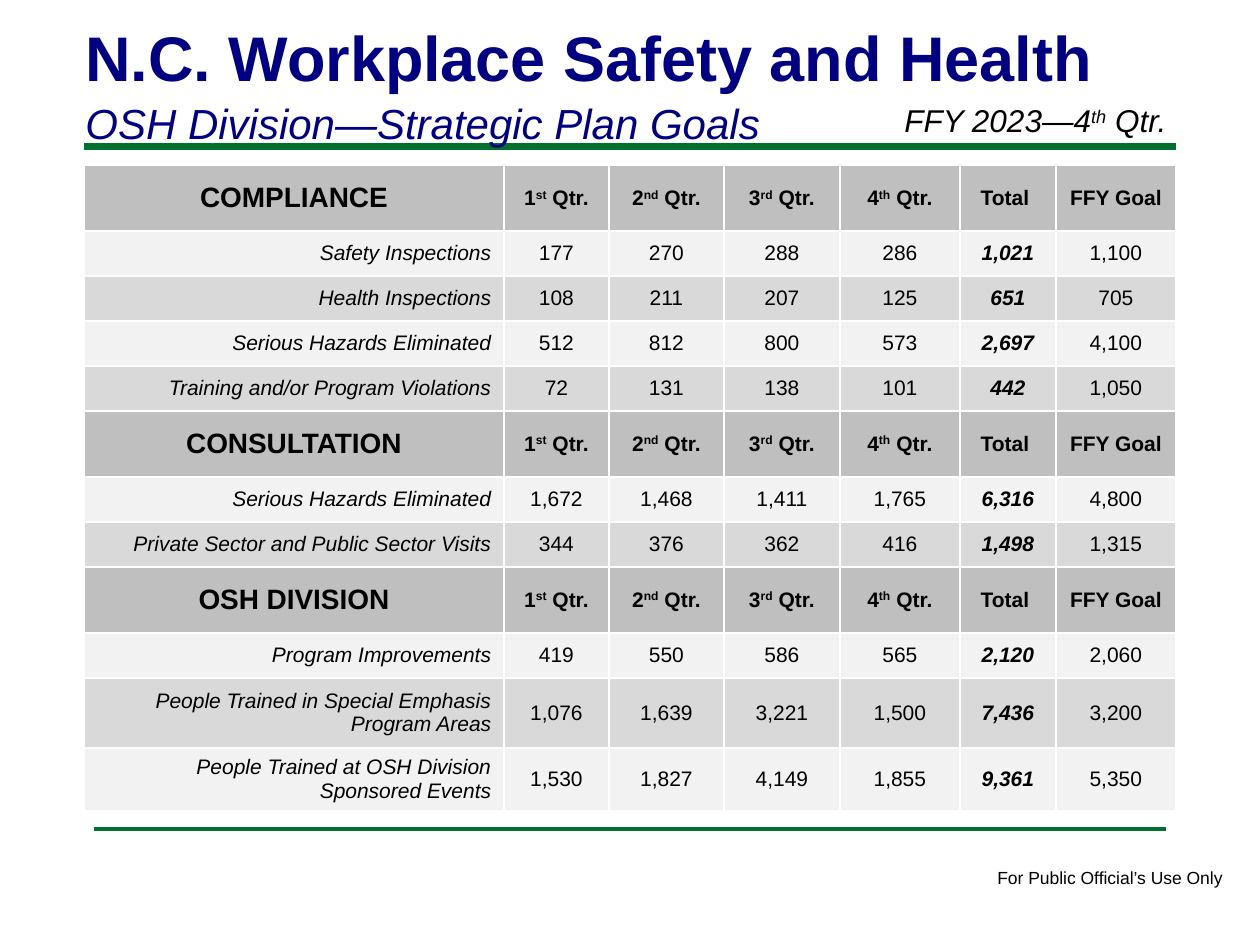
from lxml import etree
from pptx import Presentation
from pptx.dml.color import RGBColor
from pptx.enum.shapes import MSO_CONNECTOR
from pptx.enum.text import MSO_ANCHOR, PP_ALIGN
from pptx.oxml.ns import qn
from pptx.util import Pt

LEFT, CENTER, RIGHT = PP_ALIGN.LEFT, PP_ALIGN.CENTER, PP_ALIGN.RIGHT
MIDDLE = MSO_ANCHOR.MIDDLE
STRAIGHT = MSO_CONNECTOR.STRAIGHT
PX = 914400 / 126
FONT = "Arial"
NAVY, GREEN, BLACK, WHITE = "000080", "007030", "000000", "FFFFFF"
HEADER_FILL, BAND_FILLS = "BFBFBF", ("F2F2F2", "D9D9D9")

# Content: text between carets is superscript
TITLE = "N.C. Workplace Safety and Health"
SUBTITLE = "OSH Division—Strategic Plan Goals"
PERIOD = "FFY 2023—4^th^ Qtr."
FOOTER = "For Public Official’s Use Only"
HEADINGS = ["1^st^ Qtr.", "2^nd^ Qtr.", "3^rd^ Qtr.", "4^th^ Qtr.", "Total ", "FFY Goal"]
TOTAL_COLUMN = HEADINGS.index("Total ") + 1
SECTIONS = {
    "COMPLIANCE": [
        ("Safety Inspections", "177", "270", "288", "286", "1,021", "1,100"),
        ("Health Inspections", "108", "211", "207", "125", "651", "705"),
        ("Serious Hazards Eliminated", "512", "812", "800", "573", "2,697", "4,100"),
        ("Training and/or Program Violations", "72", "131", "138", "101", "442", "1,050"),
    ],
    "CONSULTATION": [
        ("Serious Hazards Eliminated", "1,672", "1,468", "1,411", "1,765", "6,316", "4,800"),
        ("Private Sector and Public Sector Visits", "344", "376", "362", "416", "1,498", "1,315"),
    ],
    "OSH DIVISION": [
        ("Program Improvements", "419", "550", "586", "565", "2,120", "2,060"),
        ("People Trained in Special Emphasis Program Areas",
         "1,076", "1,639", "3,221", "1,500", "7,436", "3,200"),
        ("People Trained at OSH Division Sponsored Events",
         "1,530", "1,827", "4,149", "1,855", "9,361", "5,350"),
    ],
}
COLUMN_WIDTHS = [420, 105, 115, 116, 120, 96, 120]
HEADER_HEIGHT, ROW_HEIGHT = 66, 45
TALL_ROWS = {10: 70, 11: 62}
RULES = [(84, 1176, 147, 4), (94, 1166, 829, 2)]  # left, right, y, points


def px(*lengths):
    return [round(length * PX) for length in lengths]


def color(value):
    return RGBColor.from_string(value)


def write(para, text, size, ink=BLACK, bold=False, italic=False, align=LEFT):
    para.alignment = align
    for index, part in enumerate(text.split("^")):
        span = para.add_run()
        span.text = part
        font = span.font
        font.name, font.size = FONT, Pt(size)
        font.bold, font.italic = bold, italic
        font.color.rgb = color(ink)
        if index % 2:
            span._r.get_or_add_rPr().set("baseline", "30000")


def add_text(page, place, wrap=True):
    frame = page.shapes.add_textbox(*px(*place)).text_frame
    frame.word_wrap = wrap
    return frame


def add_rule(page, left, right, y, points):
    rule = page.shapes.add_connector(STRAIGHT, *px(left, y, right, y))
    rule.line.color.rgb = color(GREEN)
    rule.line.width = Pt(points)
    etree.SubElement(rule._element.spPr, qn("a:effectLst"))


def style_cell(cell, fill):
    cell.vertical_anchor = MIDDLE
    cell.fill.solid()
    cell.fill.fore_color.rgb = color(fill)
    properties = cell._tc.get_or_add_tcPr()
    for index, side in enumerate(("lnL", "lnR", "lnT", "lnB")):
        border = etree.Element(qn("a:" + side), w=str(Pt(1)))
        solid = etree.SubElement(border, qn("a:solidFill"))
        etree.SubElement(solid, qn("a:srgbClr"), val=WHITE)
        properties.insert(index, border)


def add_goals(page):
    # Each row: fill, whether it is a header, cell texts
    rows = []
    for section, records in SECTIONS.items():
        rows.append((HEADER_FILL, True, [section, *HEADINGS]))
        rows += [(BAND_FILLS[i % 2], False, record) for i, record in enumerate(records)]
    heights = [HEADER_HEIGHT if header else TALL_ROWS.get(i, ROW_HEIGHT)
               for i, (_, header, _) in enumerate(rows)]
    place = px(84, 165, sum(COLUMN_WIDTHS), sum(heights))
    table = page.shapes.add_table(len(rows), len(COLUMN_WIDTHS), *place).table
    for column, width in zip(table.columns, px(*COLUMN_WIDTHS)):
        column.width = width
    for row, height in zip(table.rows, px(*heights)):
        row.height = height
    for r, (fill, header, texts) in enumerate(rows):
        for c, text in enumerate(texts):
            cell = table.cell(r, c)
            style_cell(cell, fill)
            label, total = c == 0, c == TOTAL_COLUMN
            write(cell.text_frame.paragraphs[0], text,
                  size=16 if header and label else 12,
                  bold=header or total,
                  italic=not header and (label or total),
                  align=RIGHT if label and not header else CENTER)


def main():
    deck = Presentation()
    deck.slide_width, deck.slide_height = px(1260, 945)
    page = deck.slides.add_slide(deck.slide_layouts[6])

    # Rules and footer
    for rule in RULES:
        add_rule(page, *rule)
    write(add_text(page, (985, 861, 253, 34), wrap=False).paragraphs[0], FOOTER, 10)

    # Title and subtitle
    heading = add_text(page, (73, 12, 1040, 136))
    write(heading.paragraphs[0], TITLE, 36, NAVY, bold=True)
    subtitle = heading.add_paragraph()
    subtitle.space_before = Pt(2)
    write(subtitle, SUBTITLE, 24, NAVY, italic=True)

    # Goals table and reporting period
    add_goals(page)
    write(add_text(page, (892, 95, 315, 50)).paragraphs[0], PERIOD, 18, italic=True)

    deck.save("out.pptx")


if __name__ == "__main__":
    main()
